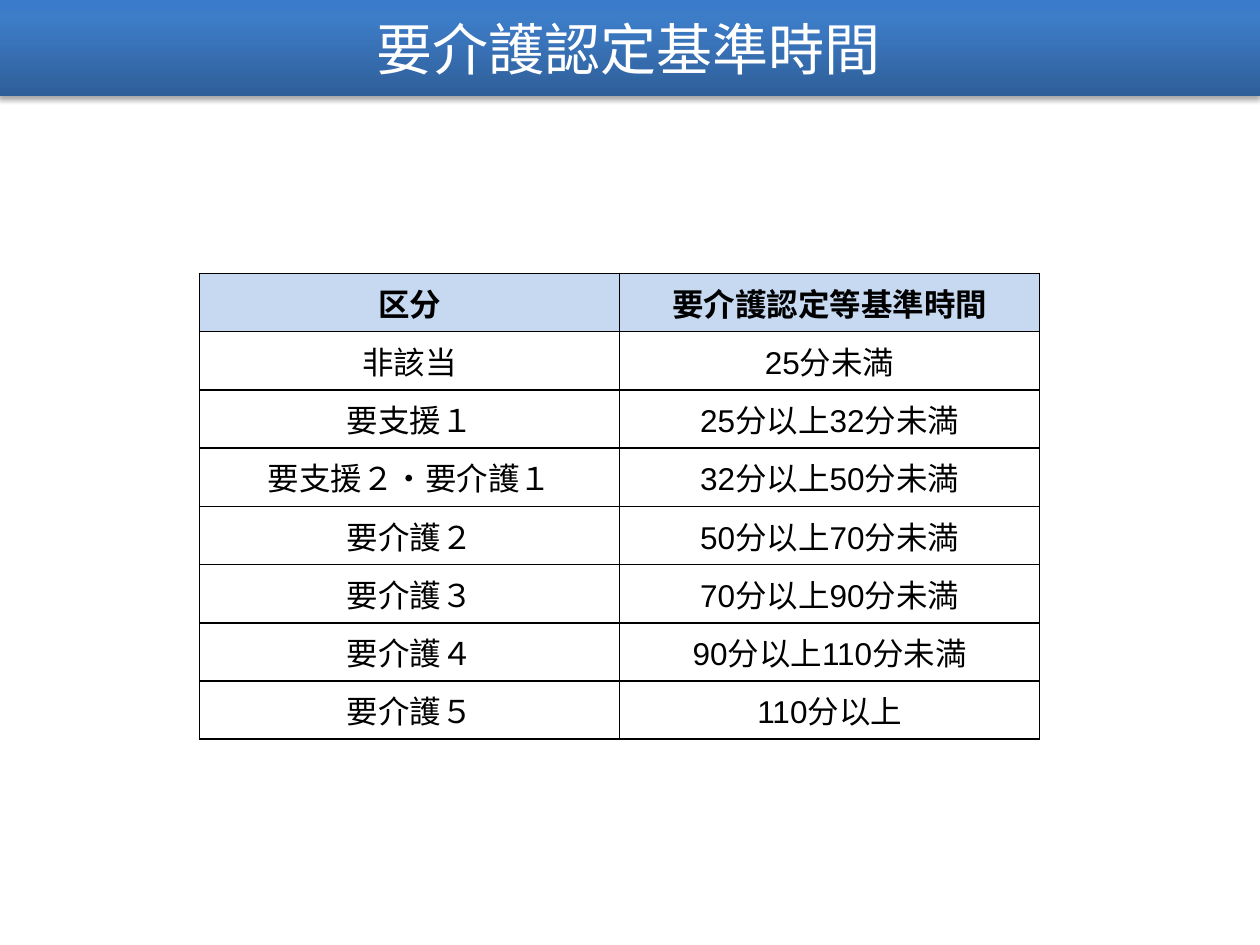
from lxml import etree
from pptx import Presentation
from pptx import util as u
from pptx.dml.color import RGBColor
from pptx.enum import shapes, text
from pptx.oxml import parse_xml
from pptx.oxml.ns import nsdecls, qn

TITLE = "要介護認定基準時間"
HEADER = ("区分", "要介護認定等基準時間")
CATEGORIES = [
    ("非該当", "25分未満"),
    ("要支援１", "25分以上32分未満"),
    ("要支援２・要介護１", "32分以上50分未満"),
    ("要介護２", "50分以上70分未満"),
    ("要介護３", "70分以上90分未満"),
    ("要介護４", "90分以上110分未満"),
    ("要介護５", "110分以上"),
]
BANNER_STOPS = [(0, "2F5F99"), (80, "3D7CC7"), (100, "3A7CCB")]
HEADER_FILL, BLACK, WHITE = "C6D9F1", "000000", "FFFFFF"
COLUMN_WIDTH, ROW_HEIGHT = u.Cm(8.47), u.Cm(1.125)


def rgb(code):
    return RGBColor.from_string(code)


def write(frame, words, size=18, font="Arial", color=BLACK, bold=False):
    paragraph = frame.paragraphs[0]
    paragraph.alignment = text.PP_ALIGN.CENTER
    run = paragraph.add_run()
    run.text = words
    run.font.size = u.Pt(size)
    run.font.name = font
    run.font.bold = bold
    run.font.color.rgb = rgb(color)


def add_banner(slide):
    banner = slide.shapes.add_shape(
        shapes.MSO_SHAPE.RECTANGLE, u.Cm(-0.05), 0, u.Cm(25.45), u.Cm(1.93))
    stops = "".join(
        f'<a:gs pos="{position * 1000}"><a:srgbClr val="{color}"/></a:gs>'
        for position, color in BANNER_STOPS)
    properties = banner.element.spPr
    properties.append(parse_xml(
        f'<a:gradFill {nsdecls("a")} rotWithShape="1"><a:gsLst>{stops}</a:gsLst>'
        '<a:lin ang="16200000" scaled="0"/></a:gradFill>'))
    banner.line.fill.background()
    properties.append(parse_xml(
        f'<a:effectLst {nsdecls("a")}><a:outerShdw blurRad="{u.Pt(3.1)}" '
        f'dist="{u.Pt(1.8)}" dir="5400000" rotWithShape="0">'
        f'<a:srgbClr val="{BLACK}"><a:alpha val="35000"/></a:srgbClr>'
        '</a:outerShdw></a:effectLst>'))
    banner.text_frame.vertical_anchor = text.MSO_ANCHOR.MIDDLE
    write(banner.text_frame, TITLE, size=32, font="Calibri", color=WHITE)


def add_borders(cell):
    """Draw a thin black line on all four sides; call before setting the fill."""
    properties = cell._tc.get_or_add_tcPr()
    for side in ("lnL", "lnR", "lnT", "lnB"):
        line = etree.SubElement(properties, qn(f"a:{side}"), w=str(u.Pt(1)))
        fill = etree.SubElement(line, qn("a:solidFill"))
        etree.SubElement(fill, qn("a:srgbClr"), val=BLACK)


def add_time_table(slide):
    rows = [HEADER, *CATEGORIES]
    table = slide.shapes.add_table(
        len(rows), len(HEADER), u.Cm(4.02), u.Cm(5.51),
        COLUMN_WIDTH * len(HEADER), ROW_HEIGHT * len(rows)).table
    table.first_row = table.horz_banding = False
    for column in table.columns:
        column.width = COLUMN_WIDTH
    for r, entries in enumerate(rows):
        table.rows[r].height = ROW_HEIGHT
        for c, words in enumerate(entries):
            cell = table.cell(r, c)
            add_borders(cell)
            if r == 0:
                cell.fill.solid()
                cell.fill.fore_color.rgb = rgb(HEADER_FILL)
            else:
                cell.fill.background()
            write(cell.text_frame, words, bold=r == 0)


def main():
    deck = Presentation()
    deck.slide_width, deck.slide_height = u.Cm(25.4), u.Cm(19.05)
    slide = deck.slides.add_slide(deck.slide_layouts[6])
    add_banner(slide)
    add_time_table(slide)
    deck.save("out.pptx")


if __name__ == "__main__":
    main()
